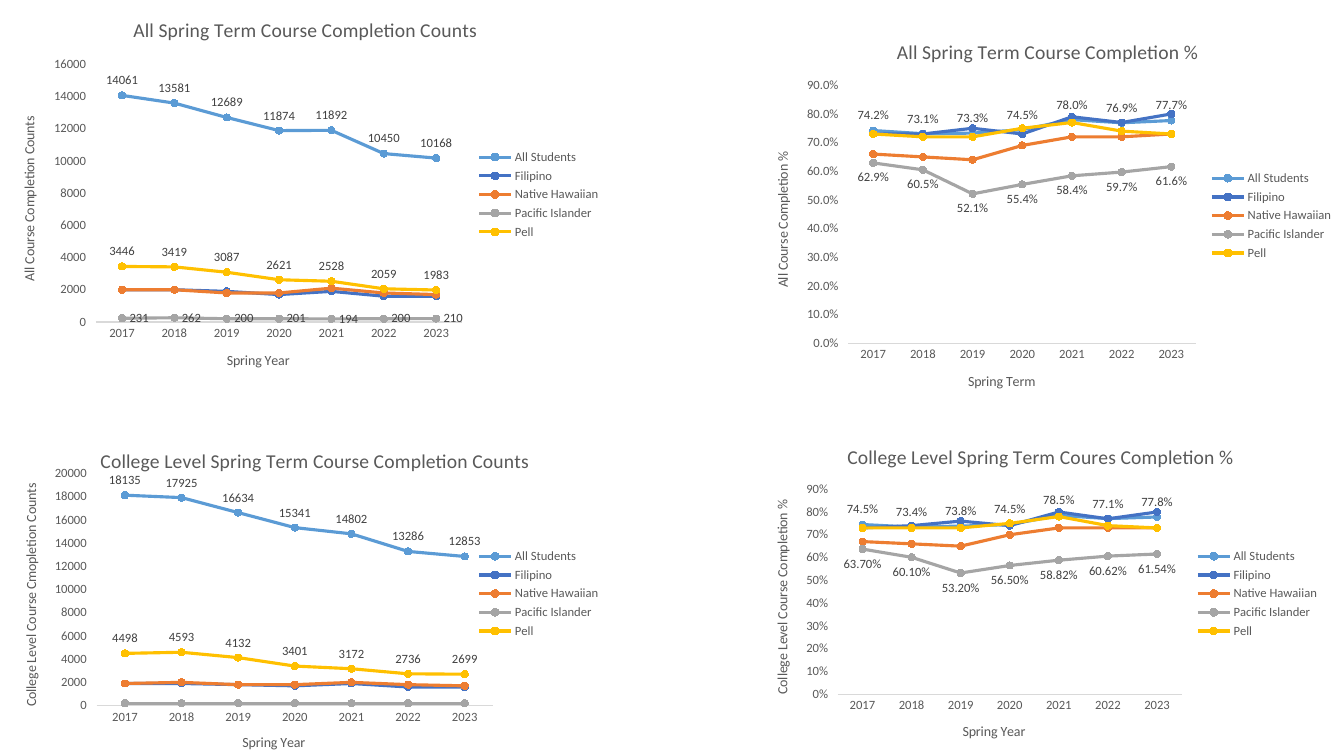
from lxml import etree
from pptx import Presentation
from pptx.chart.data import CategoryChartData
from pptx.dml.color import RGBColor
from pptx.enum.chart import (XL_CHART_TYPE, XL_LABEL_POSITION, XL_LEGEND_POSITION,
                             XL_MARKER_STYLE, XL_TICK_MARK)
from pptx.oxml.ns import qn
from pptx.util import Pt

LINE_MARKERS = XL_CHART_TYPE.LINE_MARKERS
ABOVE = XL_LABEL_POSITION.ABOVE
BELOW = XL_LABEL_POSITION.BELOW
BESIDE = XL_LABEL_POSITION.RIGHT
LEGEND_RIGHT = XL_LEGEND_POSITION.RIGHT
CIRCLE = XL_MARKER_STYLE.CIRCLE
TICK_NONE = XL_TICK_MARK.NONE
TICK_OUT = XL_TICK_MARK.OUTSIDE

FONT = "Calibri"
GREY = "595959"
LABEL_GREY = "404040"
AXIS_GREY = "D9D9D9"
YEARS = [str(year) for year in range(2017, 2024)]
GROUP_COLORS = {
    "All Students": "5B9BD5",
    "Filipino": "4472C4",
    "Native Hawaiian": "ED7D31",
    "Pacific Islander": "A5A5A5",
    "Pell": "FFC000",
}

CHARTS = [
    dict(
        box=(0, 0, 436.32, 277.92), plot=(0.157, 0.165, 0.6, 0.663),
        title="All Spring Term Course Completion Counts",
        x_title="Spring Year", y_title="All Course Completion Counts",
        y_max=16000, y_step=2000, y_format="General",
        rows=[
            (14061, 13581, 12689, 11874, 11892, 10450, 10168),
            (2000, 2000, 1900, 1700, 1900, 1600, 1600),
            (2000, 2000, 1800, 1800, 2100, 1800, 1700),
            (231, 262, 200, 201, 194, 200, 210),
            (3446, 3419, 3087, 2621, 2528, 2059, 1983),
        ],
        labels={"All Students": (ABOVE, "General"),
                "Pacific Islander": (BESIDE, "General"),
                "Pell": (ABOVE, "General")},
    ),
    dict(
        box=(537.12, 15.12, 422.64, 277.92), plot=(0.163, 0.165, 0.588, 0.663),
        title="All Spring Term Course Completion %",
        x_title="Spring Term", y_title="All Course Completion %",
        y_max=0.9, y_step=0.1, y_format="0.0%",
        rows=[
            (0.742, 0.731, 0.733, 0.745, 0.78, 0.769, 0.777),
            (0.73, 0.73, 0.75, 0.73, 0.79, 0.77, 0.8),
            (0.66, 0.65, 0.64, 0.69, 0.72, 0.72, 0.73),
            (0.629, 0.605, 0.521, 0.554, 0.584, 0.597, 0.616),
            (0.73, 0.72, 0.72, 0.75, 0.77, 0.74, 0.73),
        ],
        labels={"All Students": (ABOVE, "0.0%"),
                "Pacific Islander": (BELOW, "0.0%")},
    ),
    dict(
        box=(13.68, 308.16, 422.64, 231.84), plot=(0.131, 0.13, 0.67, 0.715),
        title="College Level Spring Term Course Completion Counts",
        x_title="Spring Year", y_title="College Level Course Cmopletion Counts",
        y_max=20000, y_step=2000, y_format="General",
        rows=[
            (18135, 17925, 16634, 15341, 14802, 13286, 12853),
            (1900, 1900, 1800, 1700, 1900, 1600, 1600),
            (1900, 2000, 1800, 1800, 2000, 1800, 1700),
            (200, 200, 200, 200, 200, 200, 200),
            (4498, 4593, 4132, 3401, 3172, 2736, 2699),
        ],
        labels={"All Students": (ABOVE, "General"),
                "Pell": (ABOVE, "General")},
    ),
    dict(
        box=(537.12, 305.28, 412.56, 237.6), plot=(0.149, 0.186, 0.595, 0.616),
        title="College Level Spring Term Coures Completion %",
        x_title="Spring Year", y_title="College Level Course Completion %",
        y_max=0.9, y_step=0.1, y_format="0%",
        rows=[
            (0.745, 0.734, 0.738, 0.745, 0.785, 0.771, 0.778),
            (0.73, 0.74, 0.76, 0.74, 0.8, 0.77, 0.8),
            (0.67, 0.66, 0.65, 0.7, 0.73, 0.73, 0.73),
            (0.637, 0.601, 0.532, 0.565, 0.5882, 0.6062, 0.6154),
            (0.73, 0.73, 0.73, 0.75, 0.78, 0.74, 0.73),
        ],
        labels={"All Students": (ABOVE, "0.0%"),
                "Pacific Islander": (BELOW, "0.00%")},
    ),
]


def rgb(color):
    """Turn a hex string into a colour."""
    return RGBColor.from_string(color)


def set_font(font, size, color=GREY):
    """Give a font its face, size and colour."""
    font.name, font.size, font.bold = FONT, Pt(size), False
    font.color.rgb = rgb(color)


def set_title(owner, text, size):
    """Write the title of a chart or an axis and return its text frame."""
    owner.has_title = True
    tf = owner.chart_title.text_frame if hasattr(owner, "chart_title") else owner.axis_title.text_frame
    tf.text = text
    set_font(tf.paragraphs[0].font, size)
    return tf


def set_plot_layout(chart, plot):
    """Fix the inner plot area as fractions of the chart."""
    area = chart._chartSpace.find(".//" + qn("c:plotArea"))
    for old in area.findall(qn("c:layout")):
        area.remove(old)
    layout = etree.Element(qn("c:layout"))
    area.insert(0, layout)
    manual = etree.SubElement(layout, qn("c:manualLayout"))
    settings = [("layoutTarget", "inner"), ("xMode", "edge"), ("yMode", "edge")]
    for name, value in settings + list(zip("xywh", plot)):
        etree.SubElement(manual, qn("c:" + name)).set("val", str(value))


def style_axes(chart, x_title, y_title, y_max, y_step, y_format):
    """Format the year axis and the value axis."""
    years, values = chart.category_axis, chart.value_axis
    for axis, text in ((years, x_title), (values, y_title)):
        axis.has_major_gridlines = False
        axis.minor_tick_mark = TICK_NONE
        set_font(axis.tick_labels.font, 9)
        tf = set_title(axis, text, 10)
    tf._txBody.bodyPr.set("rot", "-5400000")
    tf._txBody.bodyPr.set("vert", "horz")
    years.major_tick_mark = TICK_NONE
    years.format.line.color.rgb = rgb(AXIS_GREY)
    years.format.line.width = Pt(0.75)
    values.major_tick_mark = TICK_OUT
    values.format.line.fill.background()
    values.minimum_scale, values.maximum_scale = 0, y_max
    values.major_unit = y_step
    values.tick_labels.number_format = y_format
    values.tick_labels.number_format_is_linked = False


def style_series(series, label):
    """Colour one student group and label its points if asked."""
    color = rgb(GROUP_COLORS[series.name])
    series.smooth = False
    series.format.line.color.rgb = color
    series.format.line.width = Pt(2.25)
    series.marker.style, series.marker.size = CIRCLE, 5
    series.marker.format.fill.solid()
    series.marker.format.fill.fore_color.rgb = color
    series.marker.format.line.color.rgb = color
    if label:
        labels = series.data_labels
        labels.show_value = True
        labels.position, labels.number_format = label
        labels.number_format_is_linked = False
        set_font(labels.font, 9, LABEL_GREY)


def add_completion_chart(s, box, plot, title, rows, labels, **axes):
    """Place one completion line chart in its box."""
    data = CategoryChartData()
    data.categories = YEARS
    for name, row in zip(GROUP_COLORS, rows):
        data.add_series(name, row)
    chart = s.shapes.add_chart(LINE_MARKERS, *map(Pt, box), data).chart
    set_font(chart.font, 10, "000000")
    set_title(chart, title, 14)
    chart.has_legend = True
    chart.legend.position = LEGEND_RIGHT
    chart.legend.include_in_layout = False
    set_font(chart.legend.font, 9)
    chart.plots[0].vary_by_categories = False
    style_axes(chart, **axes)
    for series in chart.plots[0].series:
        style_series(series, labels.get(series.name))
    set_plot_layout(chart, plot)


def main():
    """Build the slide of four charts."""
    prs = Presentation()
    prs.slide_width, prs.slide_height = Pt(960), Pt(540)
    s = prs.slides.add_slide(prs.slide_layouts[6])
    for chart in CHARTS:
        add_completion_chart(s, **chart)
    prs.save("out.pptx")


if __name__ == "__main__":
    main()
